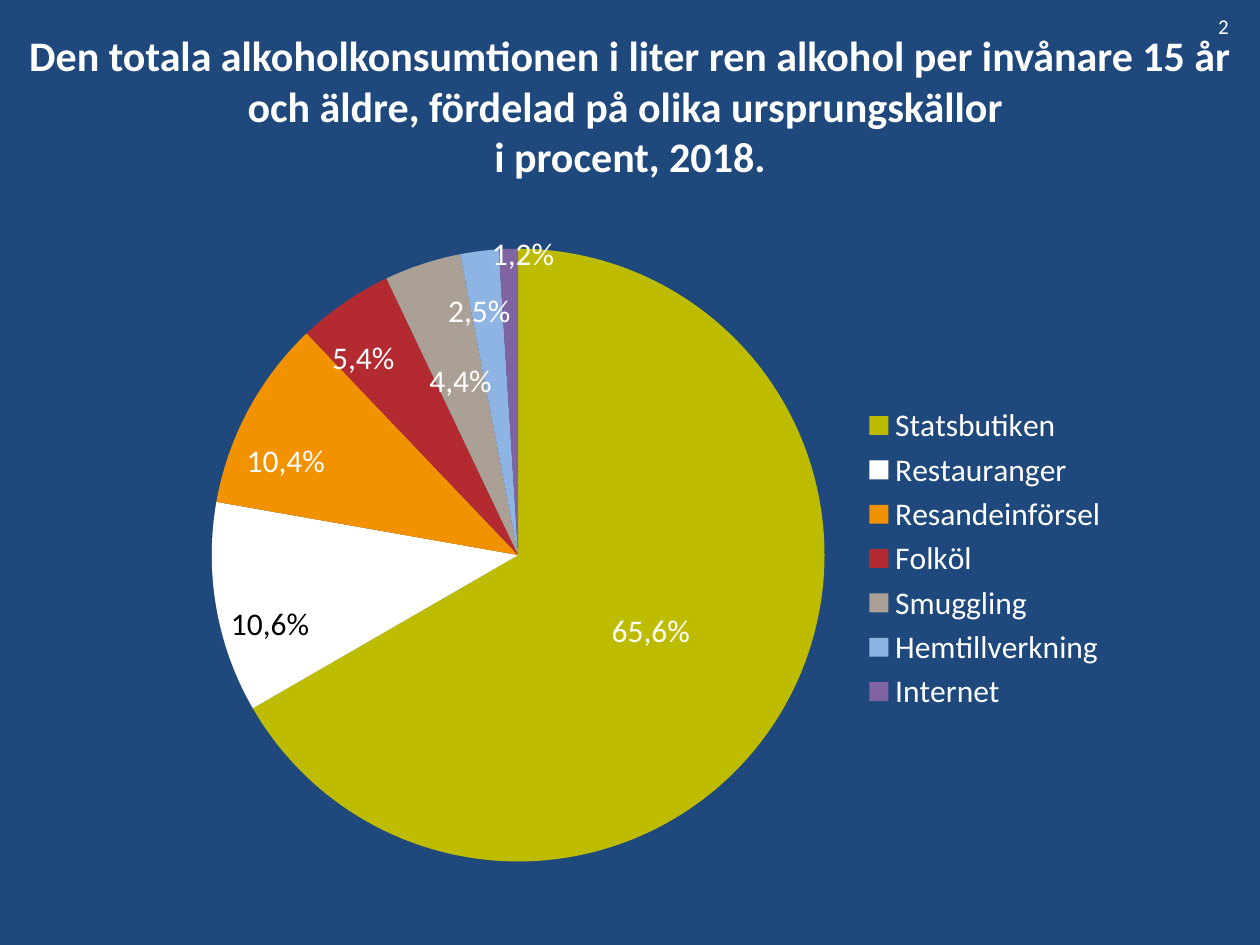
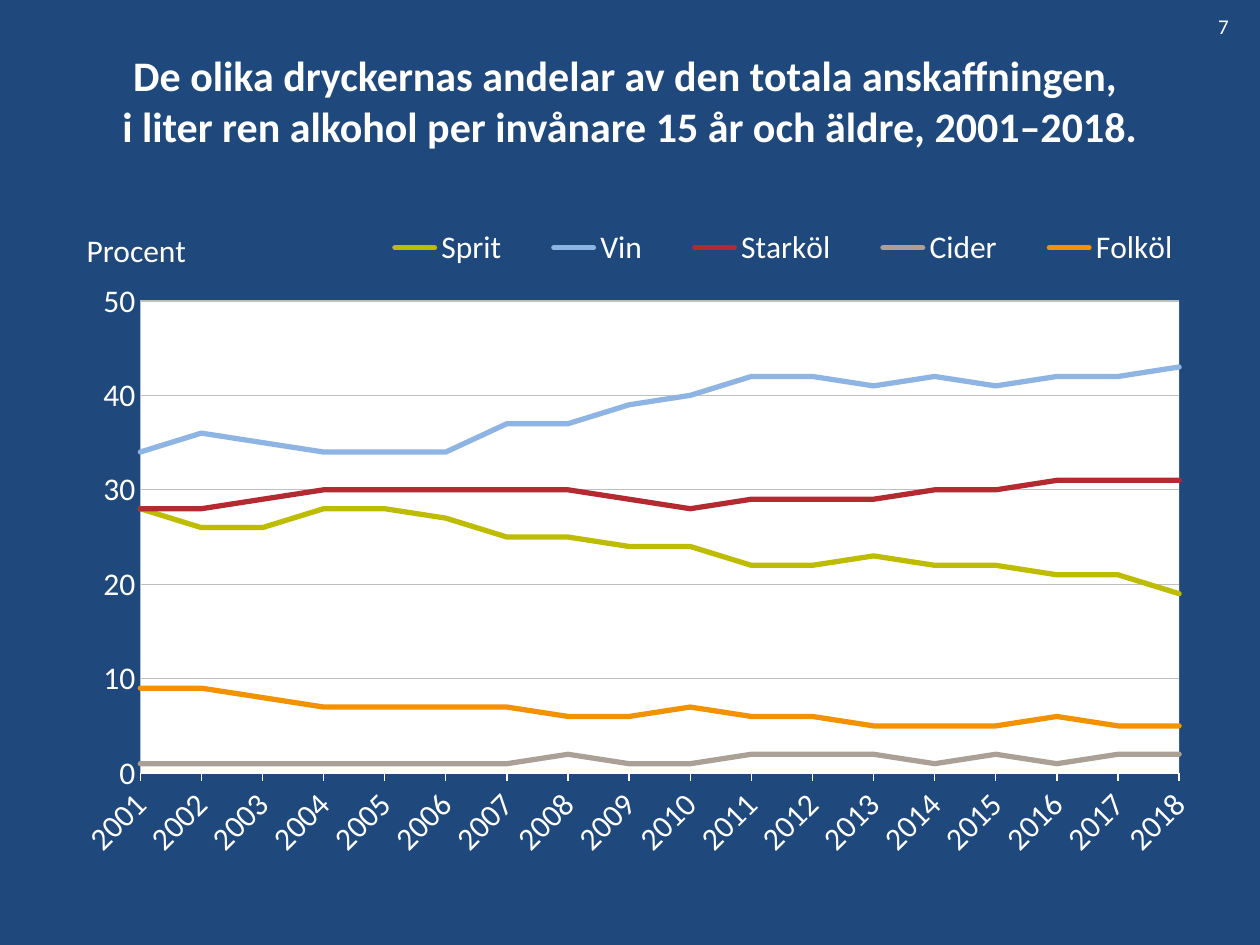
from dataclasses import dataclass
from pptx import Presentation
from pptx.chart.data import CategoryChartData as Data
from pptx.dml.color import RGBColor as RGB
from pptx.enum.chart import XL_CHART_TYPE as Kind, XL_LABEL_POSITION as Spot
from pptx.enum.chart import XL_LEGEND_POSITION as Side, XL_MARKER_STYLE as Mark
from pptx.enum.chart import XL_TICK_MARK as Tick
from pptx.enum.text import MSO_ANCHOR as Anchor, MSO_AUTO_SIZE as Fit, PP_ALIGN as Align
from pptx.oxml import parse_xml
from pptx.oxml.ns import nsdecls
from pptx.util import Inches, Pt


@dataclass(frozen=True)
class Theme:
    """Colours, font and type sizes of the deck."""
    font: str = "Calibri"
    navy: str = "1F497D"
    white: str = "FFFFFF"
    black: str = "000000"
    grid: str = "BFBFBF"
    lime: str = "BEBC00"
    amber: str = "F29200"
    red: str = "B32B31"
    stone: str = "AAA096"
    sky: str = "8EB4E3"
    plum: str = "8064A2"
    head: int = 24
    body: int = 18
    small: int = 12


T = Theme()
WIDE, HIGH = Inches(10), Inches(7.5)
YEARS = [str(year) for year in range(2001, 2019)]

SOURCES = [
    ("Statsbutiken", 66, "65,6%", T.lime, None),
    ("Restauranger", 11, "10,6%", T.white, (-0.1, 0.06)),
    ("Resandeinförsel", 10, "10,4%", T.amber, (-0.1, -0.03)),
    ("Folköl", 5, "5,4%", T.red, (-0.07, -0.1)),
    ("Smuggling", 4, "4,4%", T.stone, (-0.01, -0.04)),
    ("Hemtillverkning", 2, "2,5%", T.sky, (-0.02, -0.13)),
    ("Internet", 1, "1,2%", T.plum, (0.01, -0.21)),
]

DRINKS = [
    ("Sprit", T.lime, [28, 26, 26, 28, 28, 27, 25, 25, 24, 24, 22, 22, 23, 22, 22, 21, 21, 19]),
    ("Vin", T.sky, [34, 36, 35, 34, 34, 34, 37, 37, 39, 40, 42, 42, 41, 42, 41, 42, 42, 43]),
    ("Starköl", T.red, [28, 28, 29, 30, 30, 30, 30, 30, 29, 28, 29, 29, 29, 30, 30, 31, 31, 31]),
    ("Cider", T.stone, [1, 1, 1, 1, 1, 1, 1, 2, 1, 1, 2, 2, 2, 1, 2, 1, 2, 2]),
    ("Folköl", T.amber, [9, 9, 8, 7, 7, 7, 7, 6, 6, 7, 6, 6, 5, 5, 5, 6, 5, 5]),
]


def span(box):
    """Turn percent shares of the slide into lengths."""
    return [int(part * side / 100) for part, side in zip(box, (WIDE, HIGH, WIDE, HIGH))]


def style(font, size, color=T.white, bold=False):
    """Set face, size, colour and weight of a font."""
    font.name, font.size, font.bold = T.font, Pt(size), bold
    font.color.rgb = RGB.from_string(color)


def paint(fill, color):
    """Fill with one plain colour."""
    fill.solid()
    fill.fore_color.rgb = RGB.from_string(color)


def stroke(line, color, width):
    """Draw a line in one colour and width."""
    paint(line.fill, color)
    line.width = Pt(width)


def layout(x, y, w=None, h=None, inner=False):
    """Build a manual layout from shares of a chart."""
    parts = '<c:layoutTarget val="inner"/>' if inner else ""
    if w:
        parts += '<c:xMode val="edge"/><c:yMode val="edge"/>'
    for tag, value in zip("xywh", (x, y, w, h)):
        if value is not None:
            parts += f'<c:{tag} val="{value}"/>'
    return parse_xml(f'<c:layout {nsdecls("c")}><c:manualLayout>{parts}'
                     "</c:manualLayout></c:layout>")


def note(slide, box, text, size):
    """Place a line of text."""
    frame = slide.shapes.add_textbox(*span(box)).text_frame
    frame.word_wrap = True
    frame.text = text
    style(frame.paragraphs[0].runs[0].font, size)


def page(deck, title, number, tall):
    """Add a slide with its title and page number."""
    slide = deck.slides.add_slide(deck.slide_layouts[5])
    head = slide.shapes.title
    head.left, head.top, head.width, head.height = span((0, 2.8, 100, tall))
    frame = head.text_frame
    frame.text = title
    frame.word_wrap, frame.auto_size = True, Fit.NONE
    frame.vertical_anchor = Anchor.MIDDLE
    para = frame.paragraphs[0]
    para.alignment = Align.CENTER
    for run in para.runs:
        style(run.font, T.head, bold=True)
    note(slide, (95.7, 0.8, 4.3, 4), number, T.small)
    return slide


def graph(slide, box, kind, data, plot, side, key):
    """Add a chart with a set plot area and legend."""
    chart = slide.shapes.add_chart(kind, *span(box), data).chart
    style(chart.font, T.body)
    chart.has_title = False
    chart.has_legend = True
    chart.legend.position = side
    chart.legend.include_in_layout = False
    style(chart.legend.font, T.body)
    for old in chart.element.xpath(".//c:plotArea/c:layout | .//c:legend/c:layout"):
        old.getparent().remove(old)
    chart.element.xpath(".//c:plotArea")[0].insert(0, layout(*plot, inner=True))
    chart.element.xpath(".//c:legendPos")[0].addnext(layout(*key))
    return chart


def pie(slide, box):
    """Draw the shares of each source as a pie."""
    data = Data(number_format="0")
    data.categories = [name for name, *_ in SOURCES]
    data.add_series("Series 1", [share for _, share, *_ in SOURCES])
    chart = graph(slide, box, Kind.PIE, data, (0.07, 0.03, 0.63, 0.94),
                  Side.RIGHT, (0.74, 0.28, 0.25, 0.45))
    points = chart.plots[0].series[0].points
    for index, (_, _, text, color, _) in enumerate(SOURCES):
        paint(points[index].format.fill, color)
        label = points[index].data_label
        label.text_frame.text = text
        ink = T.black if color == T.white else T.white
        style(label.text_frame.paragraphs[0].runs[0].font, T.body, ink)
        label.position = Spot.CENTER
    for item, (*_, shift) in zip(chart.element.xpath(".//c:dLbl"), SOURCES):
        if shift:
            item.insert(1, layout(*shift))


def lines(slide, box):
    """Draw the share of each drink by year."""
    data = Data(number_format="0")
    data.categories = YEARS
    for name, _, values in DRINKS:
        data.add_series(name, values)
    chart = graph(slide, box, Kind.LINE, data, (0.09, 0.12, 0.88, 0.71),
                  Side.BOTTOM, (0.27, 0, 0.73, 0.08))
    for series, (_, color, _) in zip(chart.plots[0].series, DRINKS):
        series.smooth = False
        series.marker.style = Mark.NONE
        stroke(series.format.line, color, 3)
    for line in chart.element.xpath(".//c:ser/c:spPr/a:ln"):
        line.set("cap", "rnd")
    axes(chart)
    chart.element.xpath(".//c:plotArea")[0].append(parse_xml(
        f'<c:spPr {nsdecls("c", "a")}><a:solidFill><a:srgbClr val="{T.white}"/>'
        "</a:solidFill></c:spPr>"))


def axes(chart):
    """Format the year and percent axes."""
    years, scale = chart.category_axis, chart.value_axis
    for axis in (years, scale):
        style(axis.tick_labels.font, T.body)
        axis.minor_tick_mark = Tick.NONE
    years.major_tick_mark = Tick.OUTSIDE
    stroke(years.format.line, T.white, 0.75)
    chart.element.xpath(".//c:catAx/c:txPr/a:bodyPr")[0].set("rot", "-2700000")
    scale.major_tick_mark = Tick.NONE
    scale.minimum_scale, scale.maximum_scale, scale.major_unit = 0, 50, 10
    scale.tick_labels.number_format = "0"
    scale.tick_labels.number_format_is_linked = False
    scale.format.line.fill.background()
    stroke(scale.major_gridlines.format.line, T.grid, 0.75)
    for old in chart.element.xpath(".//c:crossBetween"):
        old.getparent().remove(old)
    chart.element.xpath(".//c:valAx/c:crosses")[0].addnext(
        parse_xml(f'<c:crossBetween {nsdecls("c")} val="midCat"/>'))


def main():
    """Build and save the deck."""
    deck = Presentation()
    deck.slide_width, deck.slide_height = WIDE, HIGH
    paint(deck.slide_master.background.fill, T.navy)
    slide = page(deck, "Den totala alkoholkonsumtionen i liter ren alkohol per invånare "
                 "15 år och äldre, fördelad på olika ursprungskällor \vi procent, 2018.",
                 "2", 16.7)
    pie(slide, (11.4, 21.5, 77.2, 74.5))
    slide = page(deck, "De olika dryckernas andelar av den totala anskaffningen, \v"
                 "i liter ren alkohol per invånare 15 år och äldre, 2001–2018.", "7", 15.6)
    lines(slide, (2.7, 23.4, 93.7, 70.4))
    note(slide, (5.9, 23.8, 20, 5.3), "Procent", T.body)
    deck.save("out.pptx")


if __name__ == "__main__":
    main()
